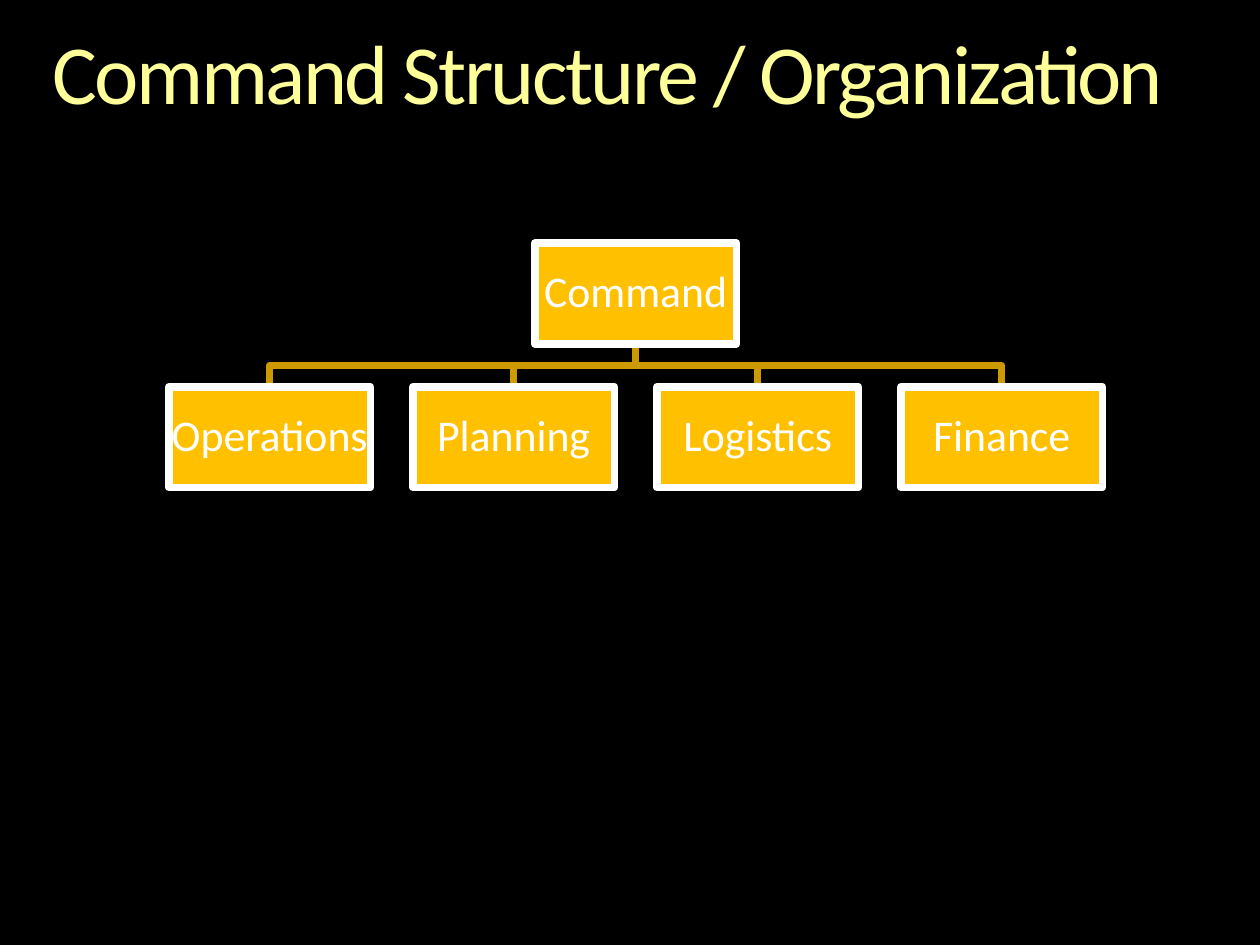
import pptx
import pptx.dml.color
import pptx.enum.shapes
import pptx.enum.text
import pptx.util
from lxml import etree

Inches, Pt = pptx.util.Inches, pptx.util.Pt
PP_ALIGN = pptx.enum.text.PP_ALIGN
ANCHOR = pptx.enum.text.MSO_ANCHOR

COLORS = {"background": "000000", "title": "FFFF99", "box": "FFC000",
          "text": "FFFFFF", "link": "CC9A00"}
LINE_WIDTH = 4.33
BRANCHES = ["Operations", "Planning", "Logistics", "Finance"]


def rgb(name):
    return pptx.dml.color.RGBColor.from_string(COLORS[name])


def set_line(sp, color):
    sp.shadow.inherit = False
    sp.line.color.rgb = rgb(color)
    sp.line.width = Pt(LINE_WIDTH)
    # Rounded corners where segments meet
    etree.SubElement(sp.line.fill._xPr, pptx.oxml.ns.qn("a:round"))


def set_text(sp, text, size, color, align, anchor, margin, wrap):
    tf = sp.text_frame
    frame_format = {"word_wrap": wrap, "vertical_anchor": anchor}
    for side in ("left", "top", "right", "bottom"):
        frame_format[f"margin_{side}"] = Inches(margin)
    for name, value in frame_format.items():
        setattr(tf, name, value)
    p = tf.paragraphs[0]
    p.alignment, p.line_spacing = align, 0.9
    r = p.add_run()
    r.text = text
    for name, value in {"name": "Calibri", "size": Pt(size)}.items():
        setattr(r.font, name, value)
    r.font.color.rgb = rgb(color)
    return r


def add_title(s, text, left, top, width, height):
    sp = s.shapes.add_textbox(Inches(left), Inches(top), Inches(width), Inches(height))
    r = set_text(sp, text, 48, "title", PP_ALIGN.LEFT, ANCHOR.TOP, 0, True)
    r.font._element.set("spc", "-150")  # tightened letter spacing


def add_box(s, text, left, top, width, height):
    sp = s.shapes.add_shape(pptx.enum.shapes.MSO_SHAPE.RECTANGLE, Inches(left),
                            Inches(top), Inches(width), Inches(height))
    sp.fill.solid()
    sp.fill.fore_color.rgb = rgb("box")
    set_line(sp, "text")
    set_text(sp, text, 25, "text", PP_ALIGN.CENTER, ANCHOR.MIDDLE, 0.02, False)


def add_link(s, x1, y1, x2, y2):
    middle = (y1 + y2) / 2
    fb = s.shapes.build_freeform(Inches(x1), Inches(y1))
    points = [(x1, middle), (x2, middle), (x2, y2)]
    fb.add_line_segments([(Inches(x), Inches(y)) for x, y in points], close=False)
    sp = fb.convert_to_shape()
    sp.fill.background()
    set_line(sp, "link")


def add_org_chart(s, root, branches, left, top, width, height):
    box_w, box_h = 1.6, 0.8
    step = (width - box_w) / (len(branches) - 1)
    center = left + width / 2
    branch_top = top + height - box_h
    lefts = [left + i * step for i in range(len(branches))]

    # Links lie behind the boxes
    for x in reversed(lefts):
        add_link(s, center, top + box_h, x + box_w / 2, branch_top)
    add_box(s, root, center - box_w / 2, top, box_w, box_h)
    for text, x in zip(branches, lefts):
        add_box(s, text, x, branch_top, box_w, box_h)


def main():
    prs = pptx.Presentation()
    prs.slide_width, prs.slide_height = Inches(10), Inches(7.5)
    s = prs.slides.add_slide(prs.slide_layouts[6])
    s.background.fill.solid()
    s.background.fill.fore_color.rgb = rgb("background")
    add_title(s, "Command Structure / Organization", 0.42, 0.25, 9.17, 0.73)
    add_org_chart(s, "Command", BRANCHES, 1.34, 1.93, 7.41, 1.94)
    prs.save("out.pptx")


if __name__ == "__main__":
    main()
